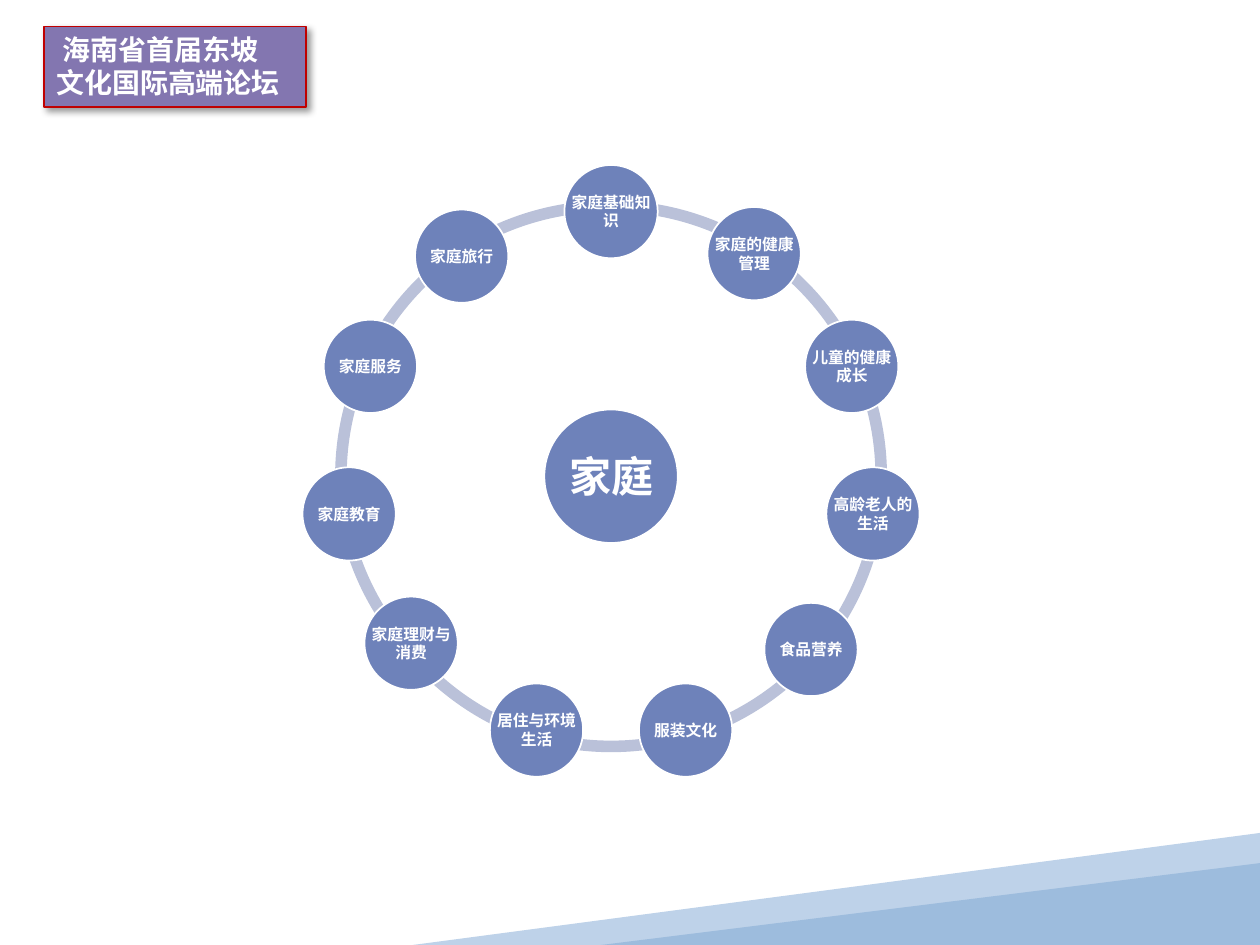
import math

import pptx
import pptx.dml.color
import pptx.enum.shapes
import pptx.enum.text
import pptx.util
from lxml import etree

Pt = pptx.util.Pt
SHAPE = pptx.enum.shapes.MSO_SHAPE
ANCHOR = pptx.enum.text.MSO_ANCHOR
ALIGN = pptx.enum.text.PP_ALIGN

THEME = {
    "font": "Noto Sans CJK SC",
    "pale": "BED2E9", "blue": "9DBCDD", "ring": "BAC1D9", "circle": "6E82BA",
    "white": "FFFFFF", "banner": "8376B0", "border": "C00000", "shadow": "000000",
    "banner_size": 16, "hub_size": 24, "topic_size": 9, "leading": 1.18,
}


def paint(shape, fill, line=None):
    shape.shadow.inherit = False
    shape.fill.solid()
    shape.fill.fore_color.rgb = pptx.dml.color.RGBColor.from_string(THEME[fill])
    if line:
        shape.line.color.rgb = pptx.dml.color.RGBColor.from_string(THEME[line])
        shape.line.width = Pt(1)
    else:
        shape.line.fill.background()


def write(box, lines, size, align, anchor, margins):
    frame = box.text_frame
    left, top = margins
    layout = {"word_wrap": True, "vertical_anchor": anchor,
              "margin_left": Pt(left), "margin_right": Pt(left),
              "margin_top": Pt(top), "margin_bottom": Pt(top)}
    for name, value in layout.items():
        setattr(frame, name, value)
    for index, line in enumerate(lines):
        para = frame.add_paragraph() if index else frame.paragraphs[0]
        para.alignment = align
        para.line_spacing = Pt(round(size * THEME["leading"], 1))
        span = para.add_run()
        span.text = line
        for name, value in {"size": Pt(size), "bold": True, "name": THEME["font"]}.items():
            setattr(span.font, name, value)
        span.font.color.rgb = pptx.dml.color.RGBColor.from_string(THEME["white"])
        east_asian = etree.SubElement(span.font._element, pptx.oxml.ns.qn("a:ea"))
        east_asian.set("typeface", THEME["font"])


deck = pptx.Presentation()
deck.slide_width, deck.slide_height = Pt(720), Pt(540)
page = deck.slides.add_slide(deck.slide_layouts[6])
shapes = page.shapes

# Sloping bands at the foot
builder = shapes.build_freeform(720, 475.92, scale=Pt(1))
builder.add_line_segments([(720, 535.68), (484.56, 540), (236.16, 540)], close=True)
paint(builder.convert_to_shape(), "pale")
wedge = shapes.add_shape(SHAPE.ISOSCELES_TRIANGLE, Pt(343.44), Pt(493.2), Pt(376.56), Pt(46.8))
wedge.adjustments[0] = 1
paint(wedge, "blue")

# Wheel geometry
TOPICS = ["家庭基础知识", "家庭的健康管理", "儿童的健康成长", "高龄老人的生活",
          "食品营养", "服装文化", "居住与环境生活", "家庭理财与消费",
          "家庭教育", "家庭服务", "家庭旅行"]
CENTER_X, CENTER_Y = 349.2, 272.16
ORBIT, RING = 151.2, 315.36
HUB, TOPIC = 76.32, 53.28
STEP = 360 / len(TOPICS)
ANGLE_UNIT = 0.6  # one degree as an adjustment value

# Ring segments; a few sit slightly off the rule: x, y, start and end shifts
ARC_SHIFTS = {6: (3.6, 1.44, 0.97, 1.36), 7: (-0.72, -4.32, -0.32, -1.02),
              9: (0, -0.72, -0.26, -1.03), 10: (-1.44, 0, -0.61, 0.24)}
for index in range(len(TOPICS)):
    shift_x, shift_y, start_shift, end_shift = ARC_SHIFTS.get(index, (0, 0, 0, 0))
    arc = shapes.add_shape(SHAPE.BLOCK_ARC, Pt(CENTER_X - RING / 2 + shift_x),
                           Pt(CENTER_Y - RING / 2 + shift_y), Pt(RING), Pt(RING))
    start = (270 + index * STEP) % 360
    end = (270 + (index + 1) * STEP) % 360
    arc.adjustments[0] = start * ANGLE_UNIT + start_shift
    arc.adjustments[1] = end * ANGLE_UNIT + end_shift
    arc.adjustments[2] = 0.021
    paint(arc, "ring")

# Hub and topic circles
TOPIC_SHIFTS = {7: (0, -3.6), 10: (-3.6, 1.44)}
circles = [("家庭", CENTER_X, CENTER_Y, HUB, THEME["hub_size"], 2.16)]
for index, topic in enumerate(TOPICS):
    shift_x, shift_y = TOPIC_SHIFTS.get(index, (0, 0))
    turn = math.radians(index * STEP)
    circles.append((topic, CENTER_X + ORBIT * math.sin(turn) + shift_x,
                    CENTER_Y - ORBIT * math.cos(turn) + shift_y,
                    TOPIC, THEME["topic_size"], 0.72))
for label, x, y, diameter, size, margin in circles:
    place = [Pt(x - diameter / 2), Pt(y - diameter / 2), Pt(diameter), Pt(diameter)]
    paint(shapes.add_shape(SHAPE.OVAL, *place), "circle", "white")
    write(shapes.add_textbox(*place), [label], size,
          ALIGN.CENTER, ANCHOR.MIDDLE, (margin, margin))

# Banner with a soft shadow
banner = shapes.add_shape(SHAPE.RECTANGLE, Pt(25.2), Pt(15.12), Pt(149.76), Pt(46.08))
paint(banner, "banner", "border")
write(banner, [" 海南省首届东坡", "文化国际高端论坛"], THEME["banner_size"],
      ALIGN.LEFT, ANCHOR.TOP, (7.2, 3.6))
effects = banner._element.spPr.find(pptx.oxml.ns.qn("a:effectLst"))
shadow = etree.SubElement(effects, pptx.oxml.ns.qn("a:outerShdw"),
                          blurRad=str(Pt(4)), dist=str(Pt(3)), dir="2700000",
                          algn="tl", rotWithShape="0")
tint = etree.SubElement(shadow, pptx.oxml.ns.qn("a:srgbClr"), val=THEME["shadow"])
etree.SubElement(tint, pptx.oxml.ns.qn("a:alpha"), val="40000")

deck.save("out.pptx")
